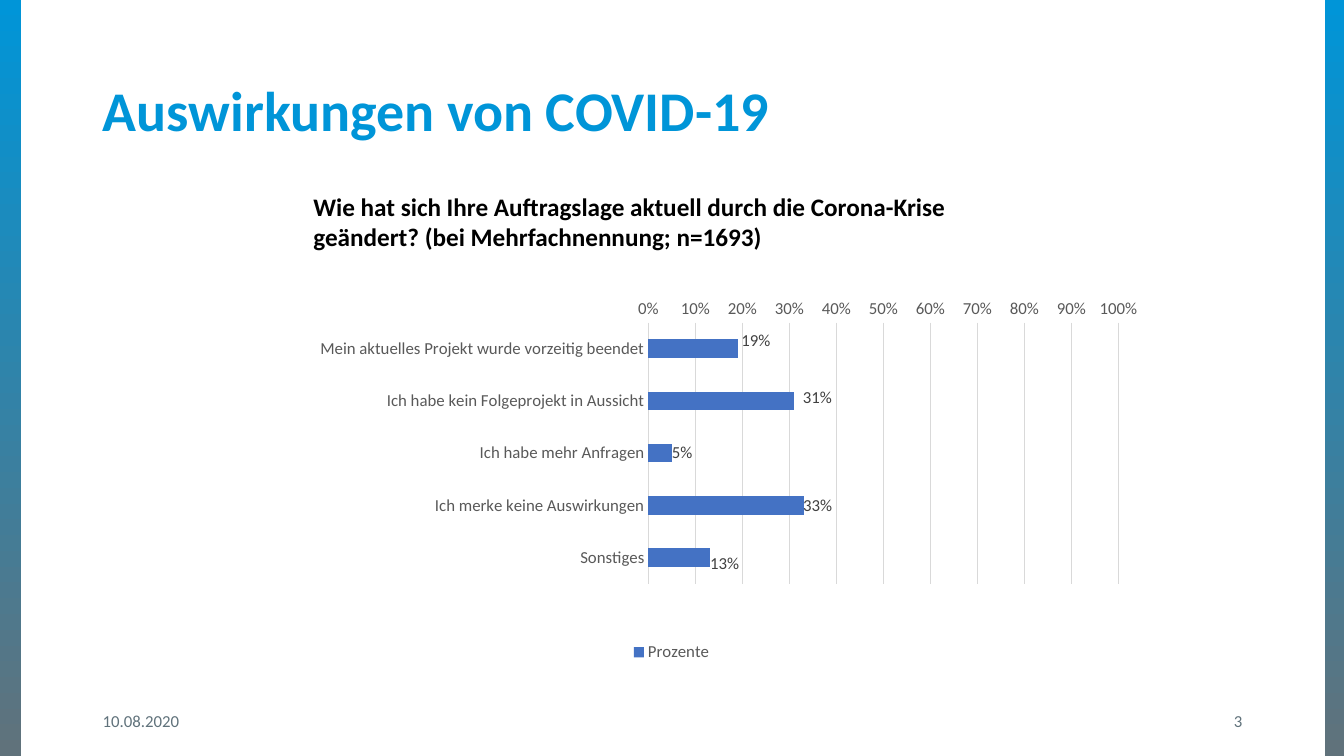
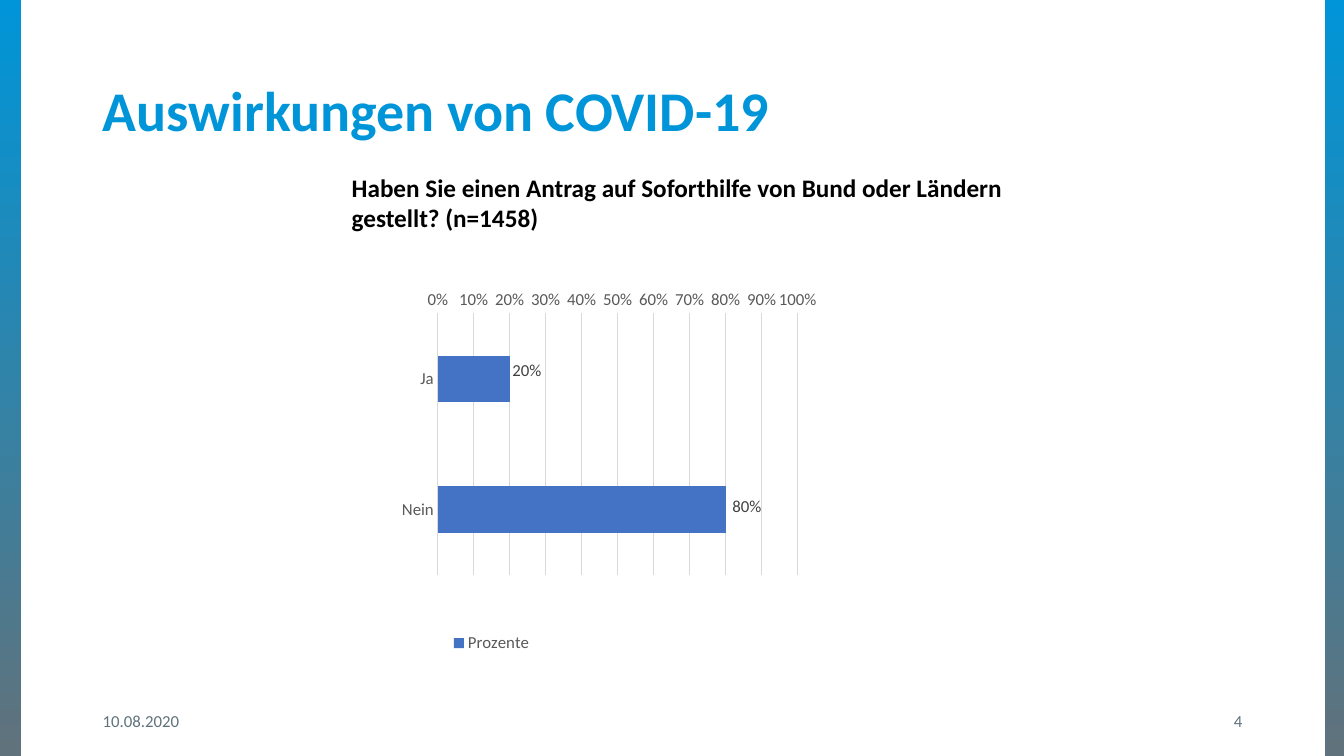
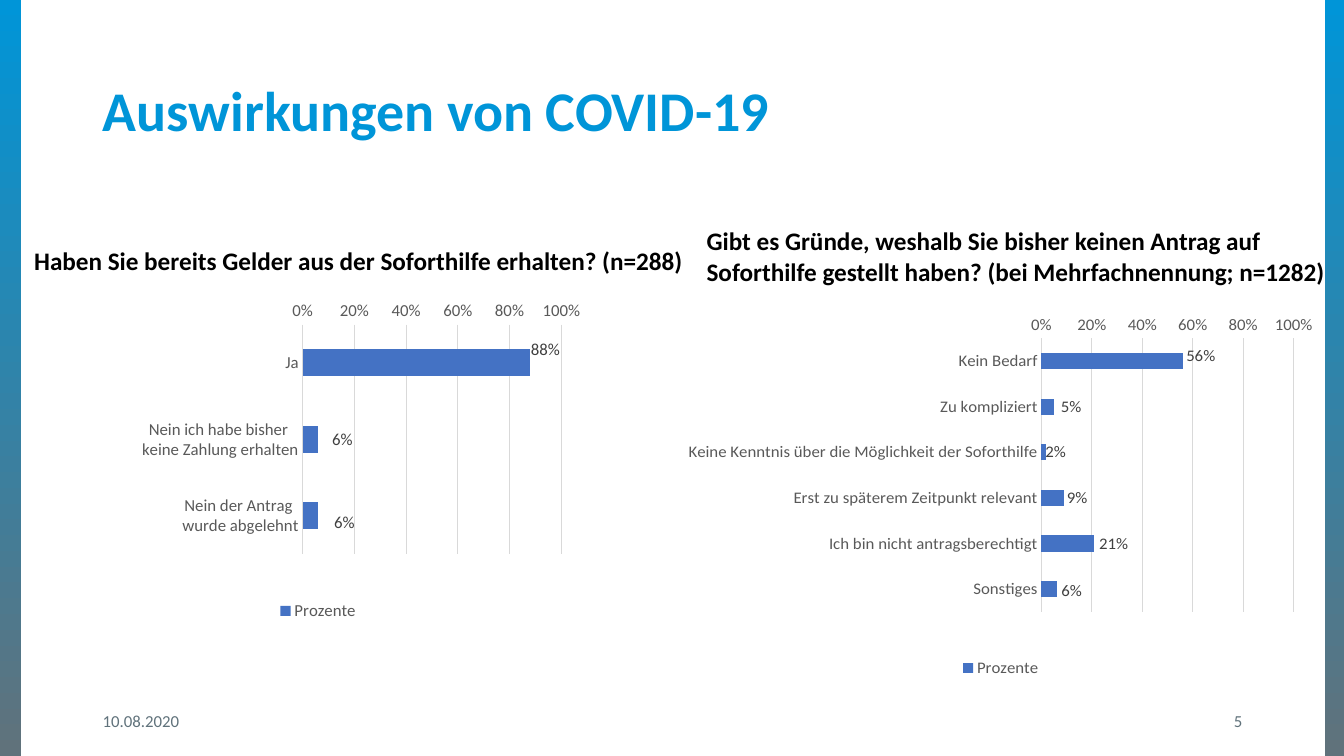
from lxml import etree
from pptx import Presentation
from pptx import util as u
from pptx.chart.data import CategoryChartData
from pptx.dml.color import RGBColor
from pptx.enum import chart as ch, shapes, text
from pptx.oxml.ns import qn

BLUE = RGBColor(0x00, 0x95, 0xD8)
SLATE = RGBColor(0x60, 0x72, 0x7B)
BLACK = RGBColor(0x00, 0x00, 0x00)
BAR = RGBColor(0x44, 0x72, 0xC4)
AXIS_TEXT = RGBColor(0x59, 0x59, 0x59)
LABEL_TEXT = RGBColor(0x40, 0x40, 0x40)
GRID = RGBColor(0xD9, 0xD9, 0xD9)

TITLE_FONT = {"size": u.Pt(40), "bold": True, "color": BLUE}
QUESTION_FONT = {"size": u.Pt(18), "bold": True, "color": BLACK}
FOOTER_FONT = {"size": u.Pt(12), "color": SLATE}
AXIS_FONT = {"size": u.Pt(12), "color": AXIS_TEXT}
LABEL_FONT = {"size": u.Pt(12), "color": LABEL_TEXT}


def style(font, formats):
    font.name = "Calibri"
    for name, value in formats.items():
        if name == "color":
            font.color.rgb = value
        else:
            setattr(font, name, value)


def hairline(line):
    line.color.rgb = GRID
    line.width = u.Pt(0.75)


def insert_layout(parent, index, **fields):
    """Give a chart part a manual layout; the fields follow schema order."""
    for old in parent.findall(qn("c:layout")):
        parent.remove(old)
    layout = etree.Element(qn("c:layout"))
    manual = etree.SubElement(layout, qn("c:manualLayout"))
    for name, value in fields.items():
        etree.SubElement(manual, qn(f"c:{name}")).set("val", str(value))
    parent.insert(index, layout)


class SurveyDeck:
    def __init__(self):
        self.prs = Presentation()
        self.prs.slide_width = u.Inches(13.33)
        self.prs.slide_height = u.Inches(7.5)
        self.slide = None

    def new_slide(self, title, date, number):
        self.slide = self.prs.slides.add_slide(self.prs.slide_layouts[5])
        for left in (13.14, 0):
            self.band(left)
        self.title(title)
        self.footer(date, 0.92, text.PP_ALIGN.LEFT)
        self.footer(str(number), 9.42, text.PP_ALIGN.RIGHT)

    def band(self, left):
        band = self.slide.shapes.add_shape(
            shapes.MSO_SHAPE.RECTANGLE, u.Inches(left), u.Inches(-0.01), u.Inches(0.21), u.Inches(7.51))
        band.shadow.inherit = False
        band.line.fill.background()
        band.fill.gradient()
        band.fill.gradient_angle = 270
        for stop, color, position in zip(band.fill.gradient_stops, (BLUE, SLATE), (0, 1)):
            stop.color.rgb = color
            stop.position = position

    def title(self, wording):
        title = self.slide.shapes.title
        title.left, title.top = u.Inches(0.92), u.Inches(0.4)
        title.width, title.height = u.Inches(11.5), u.Inches(1.45)
        frame = title.text_frame
        frame.auto_size = text.MSO_AUTO_SIZE.NONE
        frame.vertical_anchor = text.MSO_ANCHOR.MIDDLE
        self.set_wording(frame, wording, TITLE_FONT)
        frame.paragraphs[0].line_spacing = 0.9

    def set_wording(self, frame, wording, formats, align=text.PP_ALIGN.LEFT):
        frame.text = wording
        paragraph = frame.paragraphs[0]
        paragraph.alignment = align
        style(paragraph.runs[0].font, formats)

    def text_frame(self, left, top, width, height):
        box = self.slide.shapes.add_textbox(
            u.Inches(left), u.Inches(top), u.Inches(width), u.Inches(height))
        box.text_frame.word_wrap = True
        return box.text_frame

    def footer(self, wording, left, align):
        frame = self.text_frame(left, 6.95, 3, 0.4)
        frame.vertical_anchor = text.MSO_ANCHOR.MIDDLE
        self.set_wording(frame, wording, FOOTER_FONT, align)

    def question(self, wording, left, top, width=6.67, height=0.71, wrap=True):
        frame = self.text_frame(left, top, width, height)
        frame.word_wrap = wrap
        frame.auto_size = text.MSO_AUTO_SIZE.SHAPE_TO_FIT_TEXT
        self.set_wording(frame, wording, QUESTION_FONT)

    def bar_chart(self, answers, box, plot_area, step):
        """Draw answers given as (category, share, label dx, label dy).

        The label offsets are inches from the end of the bar to the label's middle.
        """
        data = CategoryChartData(number_format="0%")
        data.categories = [answer[0] for answer in answers]
        data.add_series("Prozente", [answer[1] for answer in answers])
        chart = self.slide.shapes.add_chart(
            ch.XL_CHART_TYPE.BAR_CLUSTERED, *map(u.Inches, box), data).chart
        style(chart.font, {"size": u.Pt(10), "color": BLACK})
        chart.has_title = False
        chart.has_legend = True
        chart.legend.position = ch.XL_LEGEND_POSITION.BOTTOM
        chart.legend.include_in_layout = False
        style(chart.legend.font, AXIS_FONT)
        self.axes(chart, step)

        plot = chart.plots[0]
        plot.gap_width = 182
        plot.vary_by_categories = False
        x, y, w, h = plot_area
        insert_layout(chart._chartSpace.chart.plotArea, 0, layoutTarget="inner",
                      xMode="edge", yMode="edge", x=x, y=y, w=w, h=h)
        series = plot.series[0]
        series.format.fill.solid()
        series.format.fill.fore_color.rgb = BAR
        self.bar_labels(series, answers, box[2:], w)

    def axes(self, chart, step):
        categories, shares = chart.category_axis, chart.value_axis
        for axis in (categories, shares):
            axis.major_tick_mark = axis.minor_tick_mark = ch.XL_TICK_MARK.NONE
            style(axis.tick_labels.font, AXIS_FONT)
        categories.reverse_order = True
        categories.crosses = ch.XL_AXIS_CROSSES.MAXIMUM
        hairline(categories.format.line)
        shares.minimum_scale, shares.maximum_scale = 0, 1
        shares.major_unit = step
        shares.tick_labels.number_format = "0%"
        shares.tick_labels.number_format_is_linked = False
        shares.format.line.fill.background()
        shares.has_major_gridlines = True
        hairline(shares.major_gridlines.format.line)

    def bar_labels(self, series, answers, chart_size, plot_width):
        labels = series.data_labels
        labels.show_value = True
        labels.number_format = "0%"
        labels.number_format_is_linked = False
        style(labels.font, LABEL_FONT)
        for index in range(len(answers)):
            label = series.points[index].data_label
            style(label.font, LABEL_FONT)
            label.position = ch.XL_LABEL_POSITION.CENTER
        width, height = chart_size
        for element, (_, share, dx, dy) in zip(series._element.iter(qn("c:dLbl")), answers):
            insert_layout(element, 1, x=round(share * plot_width / 2 + dx / width, 4),
                          y=round(dy / height, 4))
        for leader in series._element.iter(qn("c:showLeaderLines")):
            leader.set("val", "0")


def main():
    deck = SurveyDeck()
    heading, date = "Auswirkungen von COVID-19", "10.08.2020"

    deck.new_slide(heading, date, 3)
    deck.question("Wie hat sich Ihre Auftragslage aktuell durch die Corona-Krise geändert? "
                  "(bei Mehrfachnennung; n=1693)", 3.01, 1.85)
    order_situation = [
        ("Mein aktuelles Projekt wurde vorzeitig beendet", 0.19, 0.18, -0.08),
        ("Ich habe kein Folgeprojekt in Aussicht", 0.31, 0.23, -0.03),
        ("Ich habe mehr Anfragen", 0.05, 0.1, 0),
        ("Ich merke keine Auswirkungen", 0.33, 0.14, 0),
        ("Sonstiges", 0.13, 0.15, 0.06),
    ]
    deck.bar_chart(order_situation, (1.69, 2.9, 9.94, 3.71), (0.477, 0.081, 0.469, 0.699), 0.1)

    deck.new_slide(heading, date, 4)
    deck.question("Haben Sie einen Antrag auf Soforthilfe von Bund oder Ländern gestellt? (n=1458)",
                  3.39, 1.66)
    applied = [("Ja", 0.2, 0.17, -0.08), ("Nein", 0.8, 0.21, -0.03)]
    deck.bar_chart(applied, (1.07, 2.81, 7.61, 3.71), (0.43, 0.081, 0.469, 0.699), 0.1)

    deck.new_slide(heading, date, 5)
    deck.question("Haben Sie bereits Gelder aus der Soforthilfe erhalten? (n=288)",
                  0.24, 2.38, 6.69, 0.4, wrap=False)
    deck.question("Gibt es Gründe, weshalb Sie bisher keinen Antrag auf Soforthilfe gestellt haben? "
                  "(bei Mehrfachnennung; n=1282)", 6.91, 2.19)
    received = [
        ("Ja", 0.88, 0.15, -0.13),
        ("Nein ich habe bisher\n keine Zahlung erhalten", 0.06, 0.24, 0),
        ("Nein der Antrag \nwurde abgelehnt", 0.06, 0.26, 0.07),
    ]
    deck.bar_chart(received, (0.42, 2.93, 5.47, 3.27), (0.472, 0.089, 0.469, 0.696), 0.2)
    reasons = [
        ("Kein Bedarf", 0.56, 0.18, -0.05),
        ("Zu kompliziert", 0.05, 0.17, 0),
        ("Keine Kenntnis über die Möglichkeit der Soforthilfe", 0.02, 0.09, 0),
        ("Erst zu späterem Zeitpunkt relevant", 0.09, 0.13, 0),
        ("Ich bin nicht antragsberechtigt", 0.21, 0.19, 0),
        ("Sonstiges", 0.06, 0.15, 0.02),
    ]
    deck.bar_chart(reasons, (6.71, 3.13, 6.43, 3.63), (0.563, 0.02, 0.389, 0.782), 0.2)

    deck.prs.save("out.pptx")


if __name__ == "__main__":
    main()
